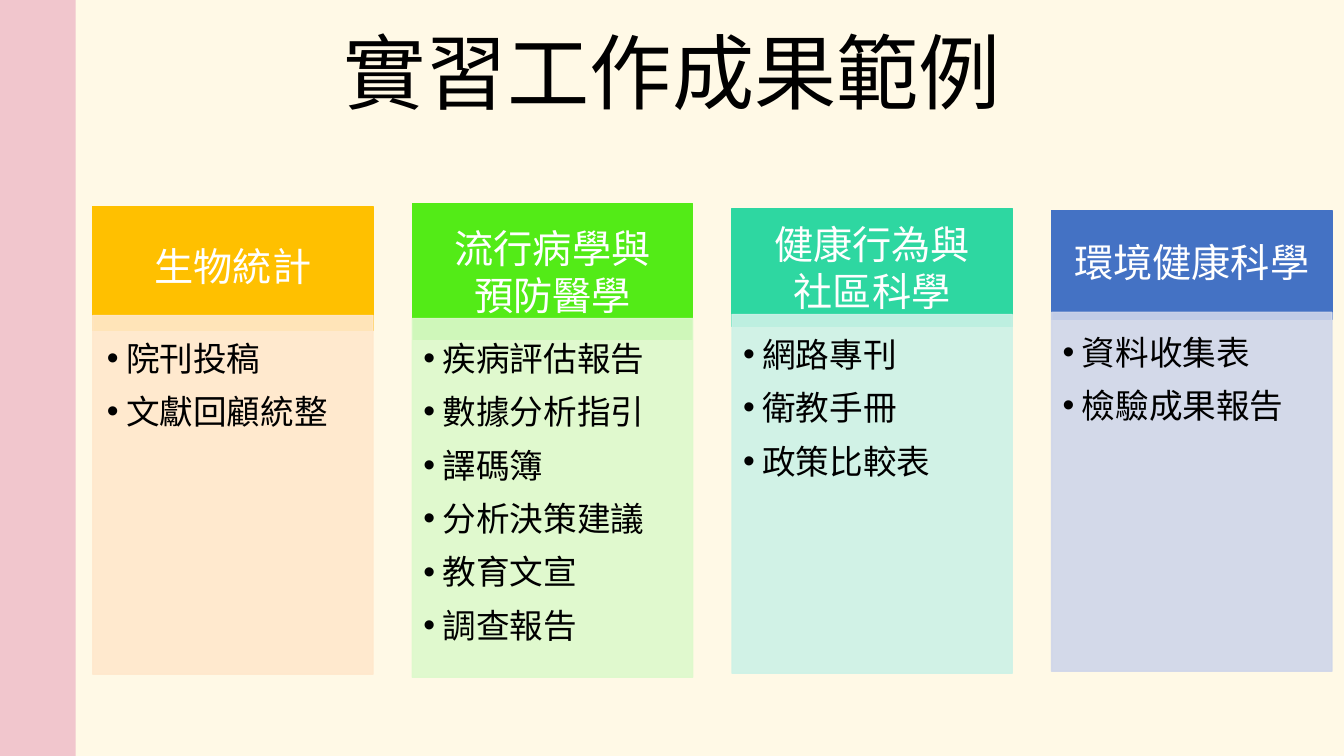
from lxml.etree import SubElement
from pptx import Presentation
from pptx.dml.color import RGBColor
from pptx.enum.shapes import MSO_SHAPE
from pptx.enum.text import MSO_ANCHOR, PP_ALIGN
from pptx.oxml.ns import qn
from pptx.util import Inches, Pt

# Content: heading, items, colours, heading top and height, body top, body insets
TITLE = "實習工作成果範例"
WIDE, NARROW = (0.14, 0.14, 0.19, 0.21), (0.11, 0.11, 0.15, 0.17)
COLUMNS = [
    (["生物統計"], ["院刊投稿", "文獻回顧統整"],
     "FFC000", "FFE8CC", 2.05, 1.23, 3.13, WIDE),
    (["流行病學與", "預防醫學"],
     ["疾病評估報告", "數據分析指引", "譯碼簿", "分析決策建議", "教育文宣", "調查報告"],
     "53EB17", "DDF9CC", 2.02, 1.35, 3.16, NARROW),
    (["健康行為與", "社區科學"], ["網路專刊", "衛教手冊", "政策比較表"],
     "2ED7A1", "CDF2E7", 2.07, 1.17, 3.12, NARROW),
    (["環境健康科學"], ["資料收集表", "檢驗成果報告"],
     "4472C4", "CFD6EA", 2.09, 1.08, 3.1, NARROW),
]
THEME = {
    "font": "Noto Sans CJK SC", "background": "FFF9E6", "band": "F1C6CD",
    "dark": "000000", "light": "FFFFFF", "body_alpha": 90,
    "title": 58.7, "heading": 28, "item": 24,
}
FIRST_LEFT, COLUMN_STEP, COLUMN_WIDTH, BODY_HEIGHT = 0.92, 3.17, 2.78, 3.56
INDENT = 0.19


def set_values(target, values):
    for name, value in values.items():
        setattr(target, name, value)


def add_span(para, text, size, color):
    span = para.add_run()
    span.text = text
    set_values(span.font, {"size": Pt(THEME[size]), "name": THEME["font"]})
    span.font.color.rgb = RGBColor.from_string(THEME[color])
    properties = span.font._element
    SubElement(properties, qn("a:ea")).set("typeface", THEME["font"])


def set_frame(box, insets, anchor):
    sides = ("margin_left", "margin_top", "margin_right", "margin_bottom")
    values = {side: Inches(inset) for side, inset in zip(sides, insets)}
    set_values(box.text_frame,
               values | {"word_wrap": True, "vertical_anchor": anchor})


def add_panel(page, area, color, outlined=True, alpha=100):
    panel = page.shapes.add_shape(MSO_SHAPE.RECTANGLE, *map(Inches, area))
    panel.shadow.inherit = False
    fills = [panel.fill]
    if outlined:
        panel.line.width = Pt(1)
        fills.append(panel.line.fill)
    else:
        panel.line.fill.background()
    for fill in fills:
        fill.solid()
        fill.fore_color.rgb = RGBColor.from_string(color)
    if alpha < 100:
        for tint in panel._element.spPr.iter(qn("a:srgbClr")):
            SubElement(tint, qn("a:alpha")).set("val", str(alpha * 1000))
    return panel


def add_bullet(para):
    properties = para._p.get_or_add_pPr()
    properties.set("marL", str(Inches(INDENT)))
    properties.set("indent", str(-Inches(INDENT)))
    SubElement(properties, qn("a:buFont")).set("typeface", "Arial")
    SubElement(properties, qn("a:buChar")).set("char", "•")


def add_heading(page, area, lines, color):
    panel = add_panel(page, area, color)
    set_frame(panel, (0.22, 0.12, 0.22, 0.12), MSO_ANCHOR.MIDDLE)
    para = panel.text_frame.paragraphs[0]
    para.alignment = PP_ALIGN.CENTER
    if len(lines) == 1:
        para.line_spacing = 0.9
    for index, line in enumerate(lines):
        if index:
            para.add_line_break()
        add_span(para, line, "heading", "light")


def add_body(page, area, items, color, insets):
    panel = add_panel(page, area, color, alpha=THEME["body_alpha"])
    set_frame(panel, insets, MSO_ANCHOR.TOP)
    frame = panel.text_frame
    for index, item in enumerate(items):
        para = frame.add_paragraph() if index else frame.paragraphs[0]
        set_values(para, {"alignment": PP_ALIGN.LEFT, "line_spacing": 1.2,
                          "space_after": Pt(3.6)})
        add_bullet(para)
        add_span(para, item, "item", "dark")


def main():
    deck = Presentation()
    set_values(deck, {"slide_width": Inches(13.33), "slide_height": Inches(7.5)})
    page = deck.slides.add_slide(deck.slide_layouts[6])
    page.background.fill.solid()
    page.background.fill.fore_color.rgb = RGBColor.from_string(THEME["background"])

    # Side band and title
    add_panel(page, (0, 0, 0.75, 7.5), THEME["band"], outlined=False)
    title = page.shapes.add_textbox(*map(Inches, (0, -0.11, 13.33, 1.63)))
    set_frame(title, (0.18, 0.09, 0.18, 0.09), MSO_ANCHOR.MIDDLE)
    para = title.text_frame.paragraphs[0]
    para.alignment = PP_ALIGN.CENTER
    add_span(para, TITLE, "title", "dark")

    # Columns: each body overlaps the foot of its heading
    for index, column in enumerate(COLUMNS):
        lines, items, strong, pale, top, height, body_top, insets = column
        left = FIRST_LEFT + index * COLUMN_STEP
        add_heading(page, (left, top, COLUMN_WIDTH, height), lines, strong)
        add_body(page, (left, body_top, COLUMN_WIDTH, BODY_HEIGHT),
                 items, pale, insets)

    deck.save("out.pptx")


if __name__ == "__main__":
    main()
